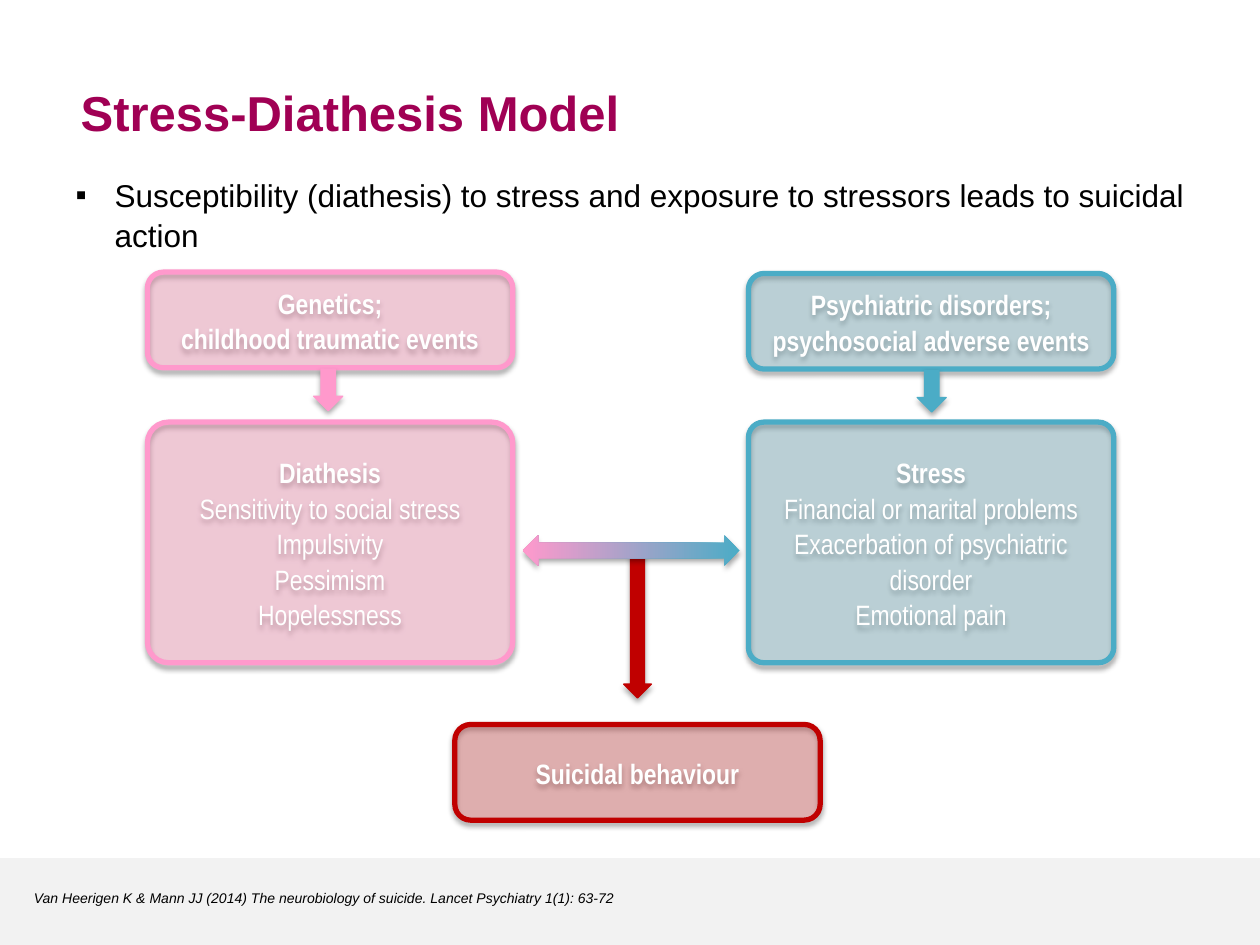
"""Build the Stress-Diathesis Model slide."""
from lxml import etree
from pptx import Presentation, util as u
from pptx.dml.color import RGBColor
from pptx.enum import shapes, text
from pptx.oxml.ns import qn

Inches, Pt = u.Inches, u.Pt
HUES = {
    "title": "A00054", "ink": "000000", "paper": "FFFFFF", "band": "F2F2F2",
    "rose": "FF6699", "pink": "FF99CC", "teal": "31859C", "aqua": "4BACC6",
    "red": "C00000",
}


def write(frame, lines, size, face, hue, bold=0, italic=False, align=text.PP_ALIGN.LEFT):
    """Fill a frame with lines, the first few of them bold."""
    frame.word_wrap = True
    frame.auto_size = text.MSO_AUTO_SIZE.NONE
    for i, line in enumerate(lines):
        para = frame.paragraphs[0] if i == 0 else frame.add_paragraph()
        para.text = line
        para.alignment = align
        para.line_spacing = 1.06
        para.space_before = para.space_after = Pt(0)
        font = para.font
        font.size, font.name = Pt(size), face
        font.bold, font.italic = i < bold, italic
        font.color.rgb = RGBColor.from_string(HUES[hue])


def draw(kind, spot, fill=None, edge=None, width=0.75, alpha=None):
    """Add a preset shape with a soft shadow below it."""
    shape = slide.shapes.add_shape(kind, *map(Inches, spot))
    if fill:
        shape.fill.solid()
        shape.fill.fore_color.rgb = RGBColor.from_string(HUES[fill])
    if alpha:
        tint = shape.fill._xPr.find(".//" + qn("a:srgbClr"))
        etree.SubElement(tint, qn("a:alpha"), val=str(alpha * 1000))
    if edge:
        shape.line.color.rgb = RGBColor.from_string(HUES[edge])
        shape.line.width = Pt(width)
    else:
        shape.line.fill.background()
    shape.shadow.inherit = False
    glow = etree.SubElement(
        shape._element.spPr.find(qn("a:effectLst")), qn("a:outerShdw"),
        blurRad="40000", dist="23000", dir="5400000", rotWithShape="0")
    shade = etree.SubElement(glow, qn("a:srgbClr"), val=HUES["ink"])
    etree.SubElement(shade, qn("a:alpha"), val="35000")
    return shape


deck = Presentation()
deck.slide_width, deck.slide_height = Inches(10), Inches(7.5)
slide = deck.slides.add_slide(deck.slide_layouts[1])
kinds = shapes.MSO_SHAPE

band = slide.shapes.add_shape(kinds.RECTANGLE, 0, Inches(6.81), Inches(10), Inches(0.69))
band.fill.solid()
band.fill.fore_color.rgb = RGBColor.from_string(HUES["band"])
band.line.fill.background()
band.shadow.inherit = False

title, body = slide.placeholders
note = slide.shapes.add_textbox(0, 0, 0, 0)
for box, spot in ((title, (0.54, 0.58, 8.5, 0.74)), (body, (0.5, 1.33, 9.12, 0.71)),
                  (note, (0.17, 7, 8.36, 0.24))):
    box.left, box.top, box.width, box.height = map(Inches, spot)
    box.text_frame.vertical_anchor = text.MSO_ANCHOR.TOP

write(title.text_frame, ["Stress-Diathesis Model"], 28, "Arial", "title", bold=1)
write(note.text_frame, ["Van Heerigen K & Mann JJ (2014) The neurobiology of suicide. "
                        "Lancet Psychiatry 1(1): 63-72"], 8, "Arial", "ink", italic=True)

props = body.text_frame.paragraphs[0]._p.get_or_add_pPr()
props.set("marL", str(Inches(0.31)))
props.set("indent", str(Inches(-0.31)))
etree.SubElement(props, qn("a:buFont"), typeface="Arial")
etree.SubElement(props, qn("a:buChar"), char="▪")
write(body.text_frame, ["Susceptibility (diathesis) to stress and exposure to stressors "
                        "leads to suicidal action"], 18, "Arial", "ink")

cards = [
    (1.17, 2.16, 0.76, "rose", "pink", 0.167, 2,
     ["Genetics;", "childhood traumatic events"]),
    (5.94, 2.17, 0.76, "teal", "aqua", 0.167, 1,
     ["Psychiatric disorders; psychosocial adverse events"]),
    (1.17, 3.35, 1.91, "rose", "pink", 0.087, 1,
     ["Diathesis", "Sensitivity to social stress", "Impulsivity", "Pessimism",
      "Hopelessness"]),
    (5.94, 3.35, 1.91, "teal", "aqua", 0.064, 1,
     ["Stress", "Financial or marital problems",
      "Exacerbation of psychiatric disorder", "Emotional pain"]),
    (3.61, 5.75, 0.76, "red", "red", 0.167, 1, ["Suicidal behaviour"]),
]
for left, top, high, fill, edge, curve, bold, lines in cards:
    card = draw(kinds.ROUNDED_RECTANGLE, (left, top, 2.9, high), fill, edge, 3, 25)
    card.adjustments[0] = curve
    card.text_frame.vertical_anchor = text.MSO_ANCHOR.MIDDLE
    write(card.text_frame, lines, 16, "Arial Narrow", "paper", bold,
          align=text.PP_ALIGN.CENTER)

for spot, hue in (((2.49, 2.93, 0.23, 0.33), "pink"), ((7.28, 2.94, 0.23, 0.33), "aqua"),
                  ((4.95, 4.4, 0.22, 1.14), "red")):
    draw(kinds.DOWN_ARROW, spot, hue, hue)

link = draw(kinds.LEFT_RIGHT_ARROW, (4.15, 4.25, 1.72, 0.24))
link.fill.gradient()
link.fill.gradient_angle = 180
for stop, hue, place in zip(link.fill.gradient_stops, ("aqua", "pink"), (0, 1)):
    stop.color.rgb = RGBColor.from_string(HUES[hue])
    stop.position = place

deck.save("out.pptx")
